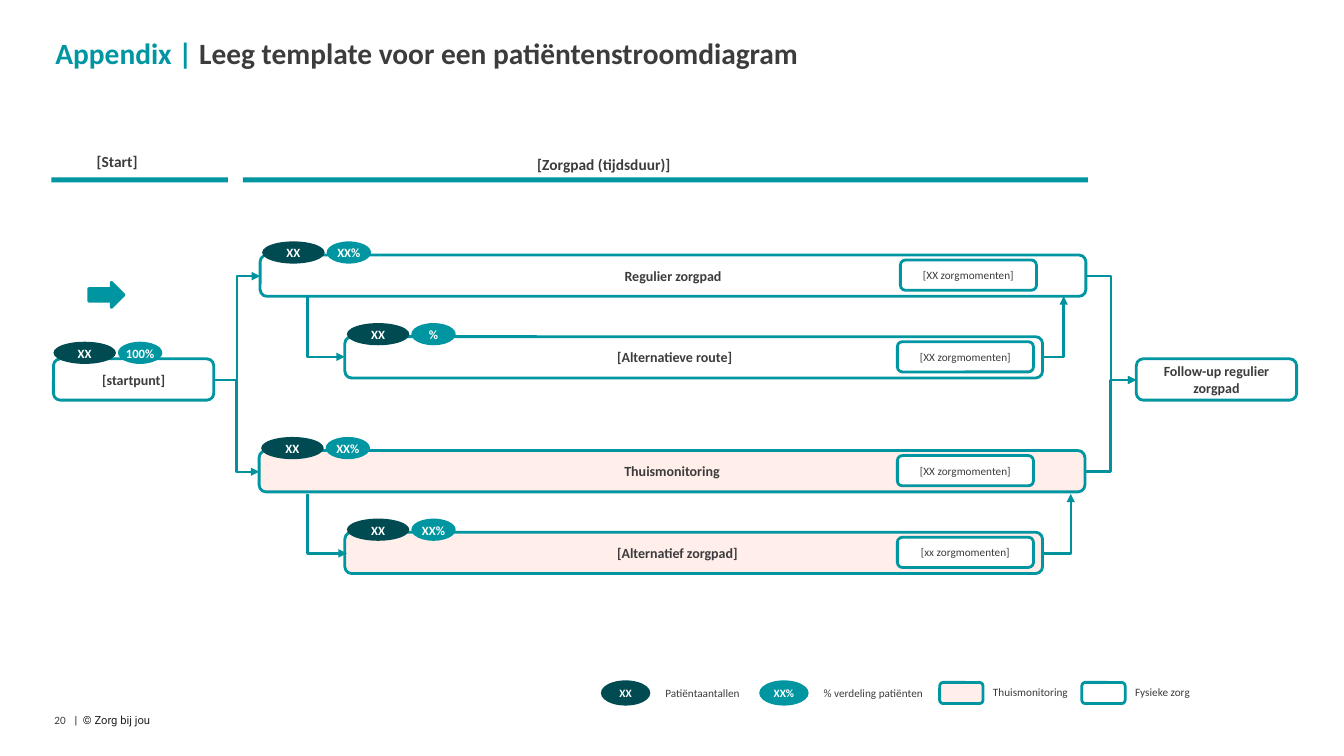
from lxml import etree
from pptx import Presentation
from pptx.dml.color import RGBColor
from pptx.enum.shapes import MSO_CONNECTOR as CONN, MSO_SHAPE as SHAPE
from pptx.enum.text import MSO_ANCHOR as ANCHOR, PP_ALIGN as ALIGN
from pptx.oxml.ns import qn
from pptx.util import Emu, Inches, Pt

TEAL = RGBColor(0x00, 0x96, 0xA1)
ROUTE = RGBColor(0x00, 0x93, 0x9D)
DARK = RGBColor(0x00, 0x4B, 0x51)
PINK = RGBColor(0xFF, 0xEE, 0xE9)
WHITE = RGBColor(0xFF, 0xFF, 0xFF)
INK = RGBColor(0x3C, 0x3C, 0x3C)
BLACK = RGBColor(0x20, 0x21, 0x24)

CELL = Inches(0.1)  # side of one grid square
BOX_H = 4.1
NO_INSET = (0, 0, 0, 0)
INSET = (1, 0.5, 1, 0.5)


class FlowSlide:
    """Draws on one slide; every length is in grid columns and rows."""

    def __init__(self, prs, font="Calibri"):
        self.shapes = prs.slides.add_slide(prs.slide_layouts[6]).shapes
        self.font = font

    def grid(self, *cells):
        return [Emu(round(c * CELL)) for c in cells]

    def set_text(self, sp, runs, size, bold=False, align=ALIGN.LEFT,
                 anchor=ANCHOR.MIDDLE, inset=INSET, spacing=None, font=None):
        """Fill sp with one paragraph of (text, colour) runs."""
        tf = sp.text_frame
        tf.word_wrap = True
        tf.vertical_anchor = anchor
        (tf.margin_left, tf.margin_top,
         tf.margin_right, tf.margin_bottom) = self.grid(*inset)
        p = tf.paragraphs[0]
        p.alignment = align
        p.line_spacing = spacing
        for text, color in runs:
            r = p.add_run()
            r.text = text
            r.font.name = font or self.font
            r.font.size = Pt(size)
            r.font.bold = bold
            r.font.color.rgb = color

    def text(self, x, y, w, h, runs, size, **style):
        sp = self.shapes.add_textbox(*self.grid(x, y, w, h))
        self.set_text(sp, runs, size, **style)

    def shape(self, kind, x, y, w, h, fill, outlined=False):
        sp = self.shapes.add_shape(kind, *self.grid(x, y, w, h))
        sp.shadow.inherit = False
        sp.fill.solid()
        sp.fill.fore_color.rgb = fill
        if outlined:
            sp.line.color.rgb = TEAL
            sp.line.width = Pt(2)
        else:
            sp.line.fill.background()
        return sp

    def header(self, x, w, label, label_x, label_y):
        self.text(label_x, label_y, 47.8, 4.1, [(label, INK)], 11,
                  bold=True, anchor=ANCHOR.BOTTOM)
        self.shape(SHAPE.RECTANGLE, x, 17.6, w, 0.5, TEAL)

    def box(self, x, y, w, label, fill=WHITE, indent=None):
        """A step; with an indent its label starts there, else it is centred."""
        sp = self.shape(SHAPE.ROUNDED_RECTANGLE, x, y, w, BOX_H, fill, True)
        align, inset = ALIGN.CENTER, INSET
        if indent is not None:
            align, inset = ALIGN.LEFT, (indent, 0.5, 0, 0.5)
        self.set_text(sp, [(label, INK)], 10, bold=True, align=align,
                      inset=inset)

    def badge(self, x, y, w, h, label, fill, size=9):
        sp = self.shape(SHAPE.OVAL, x, y, w, h, fill)
        self.set_text(sp, [(label, WHITE)], size, bold=True,
                      align=ALIGN.CENTER, inset=NO_INSET, spacing=1.06)

    def badges(self, x, y, share):
        self.badge(x, y, 6.2, 2.2, "XX", DARK)
        self.badge(x + 6.4, y, 4.4, 2.2, share, TEAL)

    def lane(self, x, y, w, label, fill, share, moments, moments_x, indent):
        self.box(x, y, w, label, fill, indent)
        self.badges(x + 0.2, y - 1.35, share)
        sp = self.shape(SHAPE.ROUNDED_RECTANGLE, moments_x, y + 0.5,
                        13.5, 3, WHITE, True)
        self.set_text(sp, [(moments, INK)], 8, align=ALIGN.CENTER,
                      inset=NO_INSET)

    def elbow(self, x1, y1, x2, y2, one_bend=False, arrow="tailEnd"):
        """Leaves (x1, y1) horizontally; a single bend arrives vertically."""
        c = self.shapes.add_connector(CONN.ELBOW, *self.grid(x1, y1, x2, y2))
        c.line.color.rgb = ROUTE
        c.line.width = Pt(1.75)
        pr = c._element.spPr
        if one_bend:
            pr.find(qn("a:prstGeom")).set("prst", "bentConnector2")
        etree.SubElement(pr.find(qn("a:ln")), qn("a:" + arrow), type="triangle")
        etree.SubElement(pr, qn("a:effectLst"))

    def legend_badge(self, x, sample, fill, label):
        self.badge(x, 67.5, 4.9, 2.5, sample, fill, 8)
        self.text(x + 5.4, 67.6, 19.6, 2.3, [(label, INK)], 8)

    def legend_box(self, x, fill, label):
        self.shape(SHAPE.ROUNDED_RECTANGLE, x, 67.7, 4.3, 2.1, fill, True)
        self.text(x + 4.3, 67.6, 19.6, 2.1, [(label, INK)], 8)


def main():
    prs = Presentation()
    prs.slide_width, prs.slide_height = Inches(13.33), Inches(7.5)
    s = FlowSlide(prs)

    s.text(5.5, 3.5, 122.4, 3.7,
           [("Appendix | ", TEAL),
            ("Leeg template voor een patiëntenstroomdiagram", INK)],
           21, bold=True, anchor=ANCHOR.TOP, inset=NO_INSET)
    s.text(5.4, 70.8, 2, 1.3, [("20", INK)], 8, inset=NO_INSET)
    s.text(7.4, 70.8, 58.6, 1.3, [("|  © Zorg bij jou", BLACK)], 8,
           inset=NO_INSET, font="Roboto")

    s.header(5.1, 17.5, "[Start]", 8.6, 13.3)
    s.header(24.1, 83.8, "[Zorgpad (tijdsduur)]", 52.3, 13.6)

    arrow = s.shape(SHAPE.DOWN_ARROW, 9.3, 27.5, 2.5, 3.5, TEAL, True)
    arrow.rotation = 270

    s.box(5.3, 35.6, 15.9, "[startpunt]")
    s.badges(5.3, 33.9, "100%")
    s.box(112.7, 35.6, 15.9, "Follow-up regulier zorgpad")

    xx = "[XX zorgmomenten]"
    for lane in (
        (25.8, 25.3, 81.9, "Regulier zorgpad", WHITE, "XX%", xx, 89.3, None),
        (34.2, 33.4, 69.2, "[Alternatieve route]", WHITE, "%", xx, 89, 26.8),
        (25.7, 44.7, 81.9, "Thuismonitoring", PINK, "XX%", xx, 89, None),
        (34.2, 52.8, 69.2, "[Alternatief zorgpad]", PINK, "XX%",
         "[xx zorgmomenten]", 89, 26.8),
    ):
        s.lane(*lane)

    middle = 37.7
    for y, left, right in ((27.4, 25.8, 107.7), (46.8, 25.7, 107.6)):
        s.elbow(21.2, middle, left, y)
        s.elbow(right, y, 112.7, middle)
    for y, top, left, right in ((35.4, 29.4, 34.2, 105.5),
                                (54.9, 49, 34.4, 106.2)):
        s.elbow(left, y, 30.5, top, one_bend=True, arrow="headEnd")
        s.elbow(103.4, y, right, top, one_bend=True)

    s.legend_badge(59.6, "XX", DARK, "Patiëntaantallen")
    s.legend_badge(75.3, "XX%", TEAL, "% verdeling patiënten")
    s.legend_box(93.2, PINK, "Thuismonitoring")
    s.legend_box(107.3, WHITE, "Fysieke zorg")

    prs.save("out.pptx")


if __name__ == "__main__":
    main()
